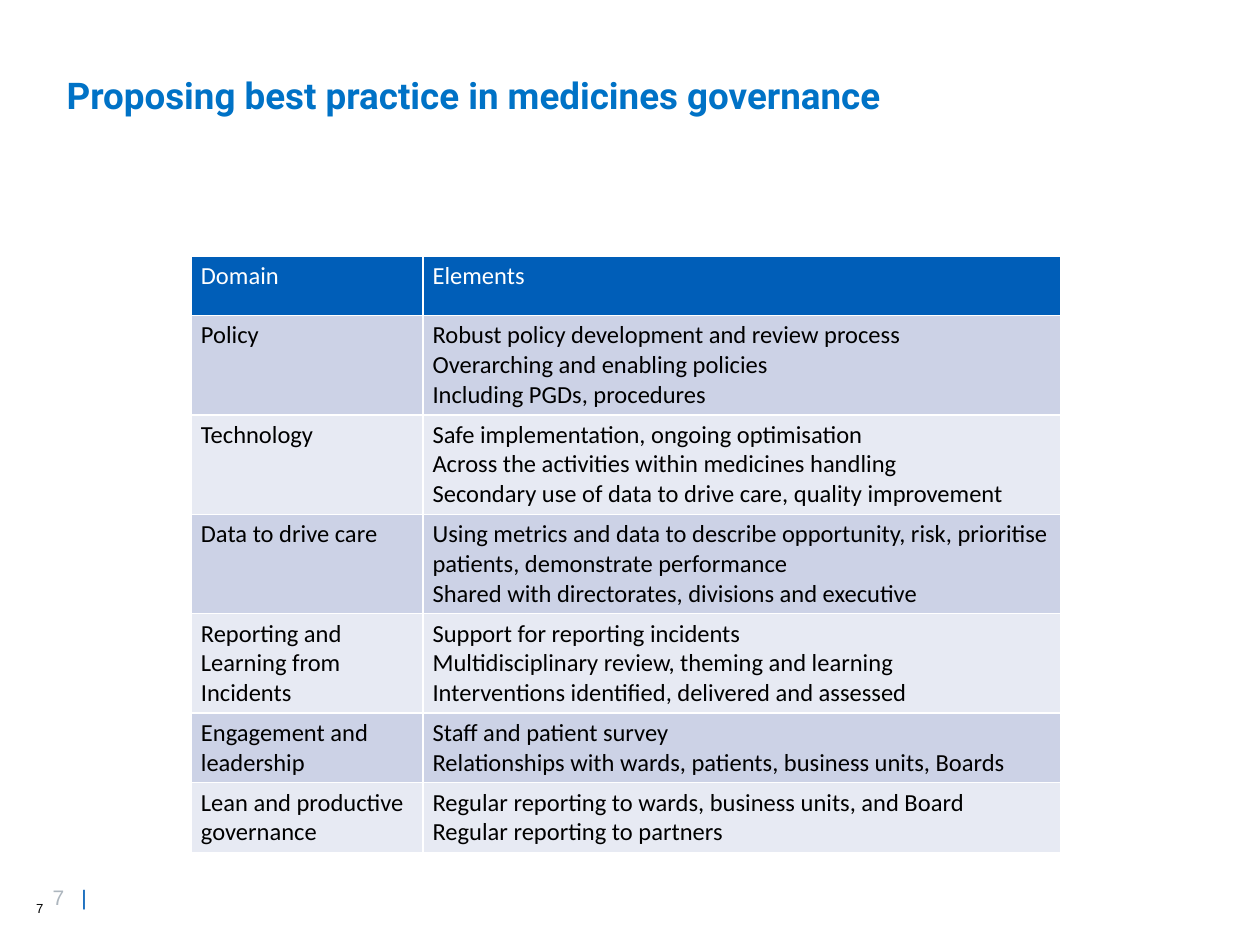
from lxml import etree
from pptx import Presentation
from pptx.dml.color import RGBColor
from pptx.enum.text import MSO_ANCHOR, MSO_AUTO_SIZE, PP_ALIGN
from pptx.oxml.ns import qn
from pptx.util import Cm, Pt

TOP, MIDDLE = MSO_ANCHOR.TOP, MSO_ANCHOR.MIDDLE
LEFT = PP_ALIGN.LEFT
NO_AUTOFIT = MSO_AUTO_SIZE.NONE
TITLE_ONLY = 5

WHITE, BLACK, GREY = "FFFFFF", "000000", "ADB6BE"
BLUE, TITLE_BLUE = "005EB8", "0072C6"
BANDS = ("CCD2E6", "E7EAF3")

COLUMN_WIDTHS = (4.67, 12.86)
ROW_HEIGHTS = (1.19, 1.9, 1.9, 1.9, 1.9, 1.35, 1.35)
ROWS = [
    ("Domain", ["Elements"]),
    ("Policy", ["Robust policy development and review process",
                "Overarching and enabling policies",
                "Including PGDs, procedures"]),
    ("Technology", ["Safe implementation, ongoing optimisation",
                    "Across the activities within medicines handling",
                    "Secondary use of data to drive care, quality improvement"]),
    ("Data to drive care", ["Using metrics and data to describe opportunity, risk, "
                            "prioritise patients, demonstrate performance",
                            "Shared with directorates, divisions and executive"]),
    ("Reporting and Learning from Incidents",
     ["Support for reporting incidents",
      "Multidisciplinary review, theming and learning",
      "Interventions identified, delivered and assessed"]),
    ("Engagement and leadership",
     ["Staff and patient survey",
      "Relationships with wards, patients, business units, Boards"]),
    ("Lean and productive governance",
     ["Regular reporting to wards, business units, and Board",
      "Regular reporting to partners"]),
]


def rgb(color):
    return RGBColor.from_string(color)


def format_font(font, name, size, color, bold=False):
    font.name, font.size, font.bold = name, Pt(size), bold
    font.color.rgb = rgb(color)


def add_title(slide, text, left, top, width, height):
    title = slide.shapes.title
    title.left, title.top, title.width, title.height = map(Cm, (left, top, width, height))
    text_frame = title.text_frame
    text_frame.text = text
    text_frame.vertical_anchor = TOP
    text_frame.auto_size = NO_AUTOFIT
    paragraph = text_frame.paragraphs[0]
    paragraph.alignment = LEFT
    paragraph.line_spacing = 0.9
    format_font(paragraph.runs[0].font, "Roboto", 21, TITLE_BLUE, bold=True)


def set_borders(cell, color, width):
    """Draw all four cell borders; they must precede the fill in the cell's XML."""
    properties = cell._tc.get_or_add_tcPr()
    for index, side in enumerate(("lnL", "lnR", "lnT", "lnB")):
        line = etree.Element(qn(f"a:{side}"), w=str(Pt(width)))
        fill = etree.SubElement(line, qn("a:solidFill"))
        etree.SubElement(fill, qn("a:srgbClr"), val=color)
        properties.insert(index, line)


def fill_cell(cell, text, fill, color):
    cell.margin_left = cell.margin_right = Cm(0.19)
    cell.margin_top = cell.margin_bottom = Cm(0.1)
    cell.vertical_anchor = TOP
    cell.fill.solid()
    cell.fill.fore_color.rgb = rgb(fill)
    set_borders(cell, WHITE, 1)
    cell.text_frame.text = text
    for paragraph in cell.text_frame.paragraphs:
        format_font(paragraph.runs[0].font, "Calibri", 14, color)


def add_domain_table(slide, left, top):
    frame = slide.shapes.add_table(len(ROWS), len(COLUMN_WIDTHS), Cm(left), Cm(top),
                                   Cm(sum(COLUMN_WIDTHS)), Cm(sum(ROW_HEIGHTS)))
    table = frame.table
    for column, width in zip(table.columns, COLUMN_WIDTHS):
        column.width = Cm(width)
    for index, (domain, elements) in enumerate(ROWS):
        table.rows[index].height = Cm(ROW_HEIGHTS[index])
        fill, color = (BANDS[(index - 1) % 2], BLACK) if index else (BLUE, WHITE)
        fill_cell(table.cell(index, 0), domain, fill, color)
        fill_cell(table.cell(index, 1), "\n".join(elements), fill, color)


def add_footer_text(slide, text, left, top, width, height, anchor):
    """Add a one-line text box and return its paragraph."""
    box = slide.shapes.add_textbox(Cm(left), Cm(top), Cm(width), Cm(height))
    text_frame = box.text_frame
    text_frame.word_wrap = True
    text_frame.vertical_anchor = anchor
    text_frame.text = text
    return text_frame.paragraphs[0]


def add_footer(slide, number, left, top):
    marker = add_footer_text(slide, number, left + 0.33, top, 1.8, 0.76, MIDDLE)
    tabs = etree.SubElement(marker._p.get_or_add_pPr(), qn("a:tabLst"))
    etree.SubElement(tabs, qn("a:tab"), pos=str(Cm(0.58)), algn="l")
    marker.add_run().text = "\t|"
    for run, color in zip(marker.runs, (GREY, BLUE)):
        format_font(run.font, "Arial", 12, color)

    small_number = add_footer_text(slide, number, left, top + 0.33, 5.89, 0.61, TOP)
    format_font(small_number.runs[0].font, "Arial", 7.5, BLACK)


def main():
    presentation = Presentation()
    presentation.slide_width, presentation.slide_height = Cm(25.4), Cm(19.05)
    slide = presentation.slides.add_slide(presentation.slide_layouts[TITLE_ONLY])
    add_title(slide, "Proposing best practice in medicines governance",
              1.09, 1.45, 20.75, 1.8)
    add_domain_table(slide, 3.86, 5.17)
    add_footer(slide, "7", 0.48, 17.7)
    presentation.save("out.pptx")


if __name__ == "__main__":
    main()
